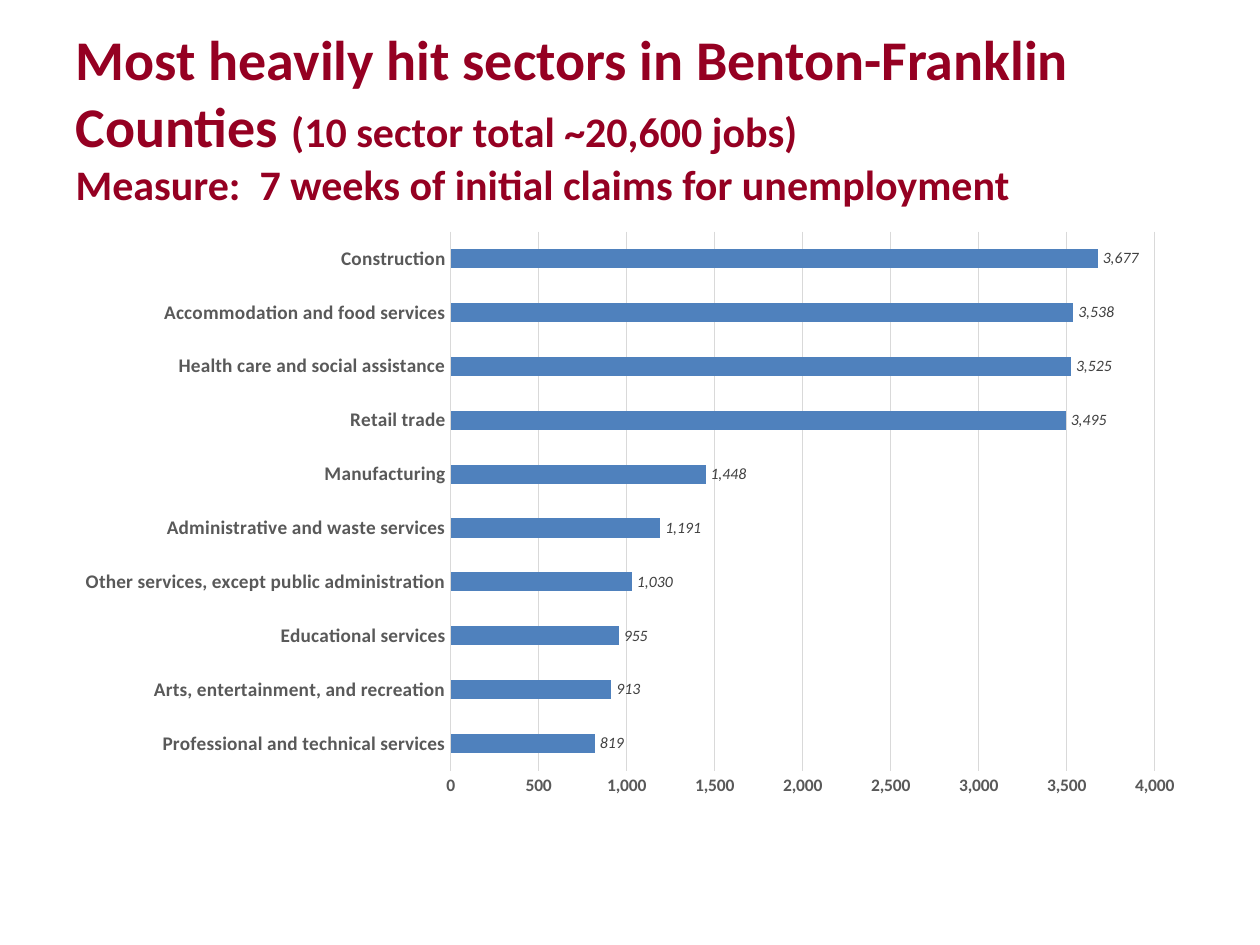
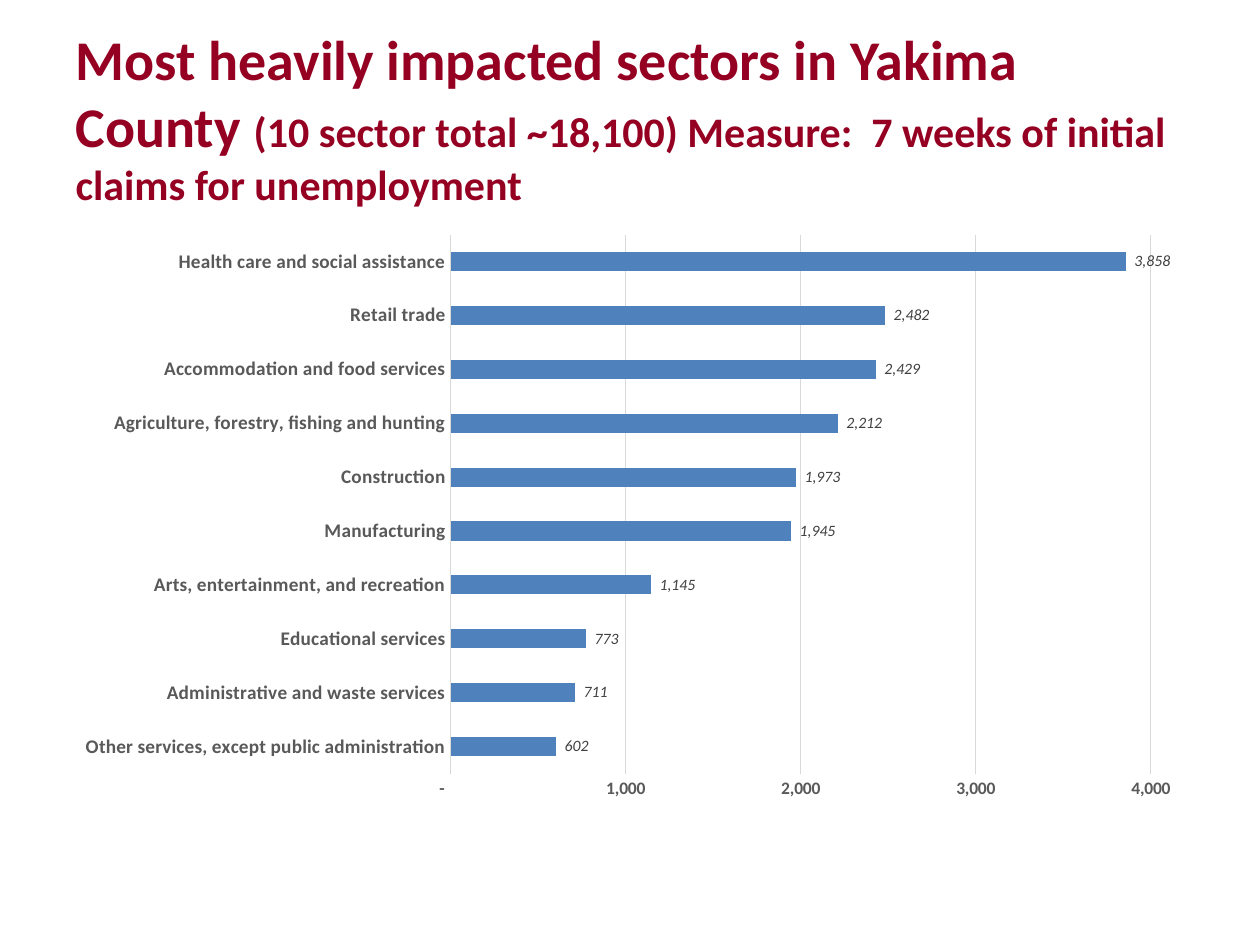
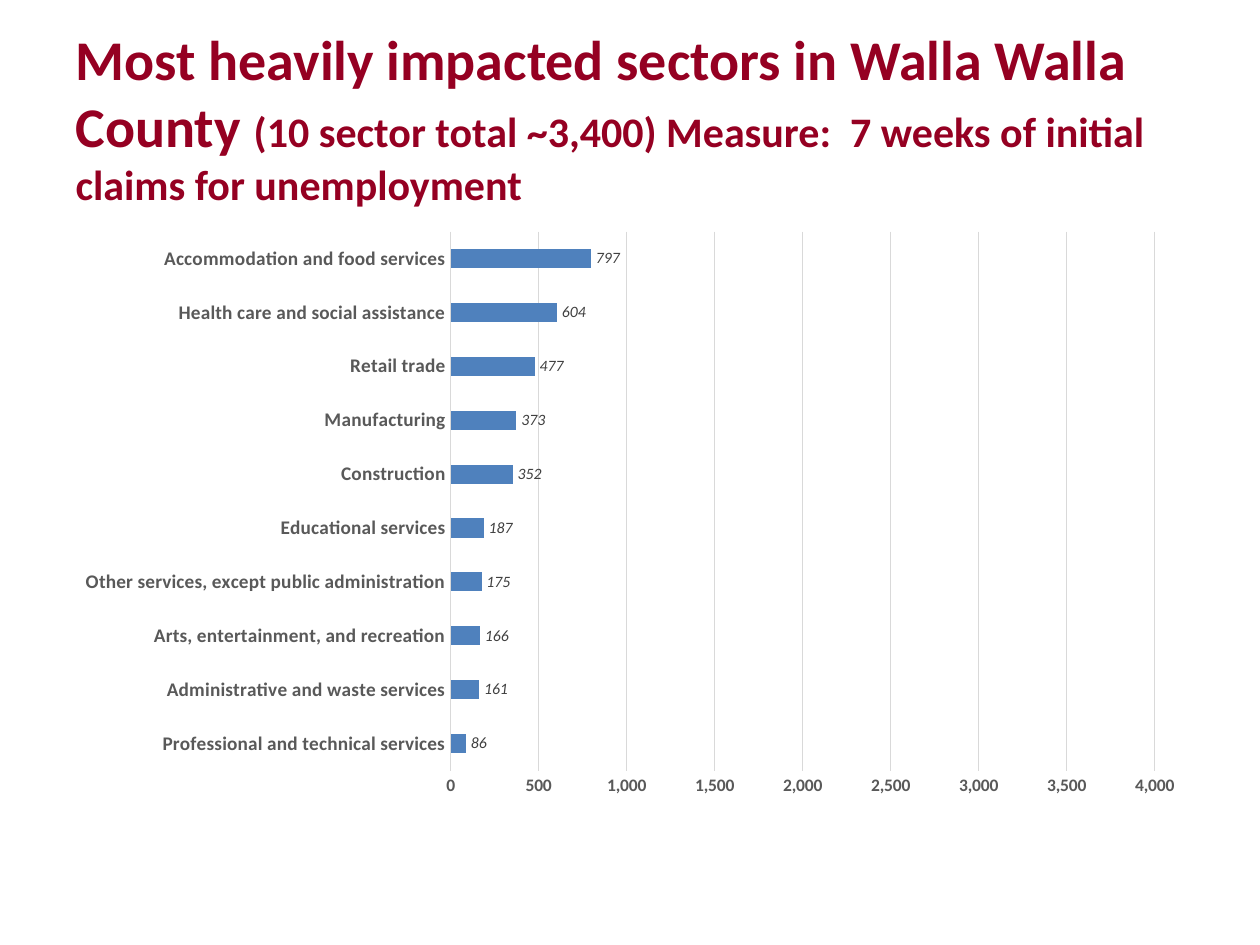
"""Build three slides charting initial unemployment claims by sector in three county areas."""
from pptx import Presentation, util as u
from pptx.chart.data import CategoryChartData
from pptx.dml.color import RGBColor
from pptx.enum import chart as ch, text

CRIMSON = RGBColor(0x95, 0x00, 0x22)
BAR_BLUE = RGBColor(0x4F, 0x81, 0xBD)
AXIS_GREY = RGBColor(0x59, 0x59, 0x59)
LABEL_GREY = RGBColor(0x40, 0x40, 0x40)
GRID_GREY = RGBColor(0xD9, 0xD9, 0xD9)
FONT = "Calibri"
PLAIN = "#,##0"
ACCOUNTING = '_(* #,##0_);_(* \\(#,##0\\);_(* "-"??_);_('

HEALTH = "Health care and social assistance"
RETAIL = "Retail trade"
FOOD = "Accommodation and food services"
BUILDING = "Construction"
MAKING = "Manufacturing"
ARTS = "Arts, entertainment, and recreation"
EDUCATION = "Educational services"
ADMIN = "Administrative and waste services"
OTHER = "Other services, except public administration"
PROFESSIONAL = "Professional and technical services"
FARMING = "Agriculture, forestry, fishing and hunting"

MEASURE = "Measure:  7 weeks of initial claims for unemployment"
COUNTIES = [
    ("Most heavily hit sectors in Benton-Franklin Counties ",
     "(10 sector total ~20,600 jobs) \v" + MEASURE, 220, 500, PLAIN,
     {PROFESSIONAL: 819, ARTS: 913, EDUCATION: 955, OTHER: 1030, ADMIN: 1191,
      MAKING: 1448, RETAIL: 3495, HEALTH: 3525, FOOD: 3538, BUILDING: 3677}),
    ("Most heavily impacted sectors in Yakima County ",
     "(10 sector total ~18,100) " + MEASURE, 223, 1000, ACCOUNTING,
     {OTHER: 602, ADMIN: 711, EDUCATION: 773, ARTS: 1145, MAKING: 1945,
      BUILDING: 1973, FARMING: 2212, FOOD: 2429, RETAIL: 2482, HEALTH: 3858}),
    ("Most heavily impacted sectors in Walla Walla County ",
     "(10 sector total ~3,400) " + MEASURE, 220, 500, PLAIN,
     {PROFESSIONAL: 86, ADMIN: 161, ARTS: 166, OTHER: 175, EDUCATION: 187,
      BUILDING: 352, MAKING: 373, RETAIL: 477, HEALTH: 604, FOOD: 797}),
]


def px(length):
    """Turn pixels at 126 to the inch into EMU."""
    return u.Emu(round(length * 914400 / 126))


def style(font, size, color, bold=False, italic=False):
    """Set every font property used on these slides."""
    font.name, font.size, font.bold, font.italic = FONT, u.Pt(size), bold, italic
    font.color.rgb = color


deck = Presentation()
deck.slide_width, deck.slide_height = px(1260), px(945)

for headline, detail, claims_top, step, number_format, claims in COUNTIES:
    slide = deck.slides.add_slide(deck.slide_layouts[5])
    title = slide.shapes.title
    title.left, title.top, title.width, title.height = px(63), px(38), px(1134), px(157)
    title.text_frame.word_wrap = True
    title.text_frame.auto_size = text.MSO_AUTO_SIZE.NONE
    title.text_frame.vertical_anchor = text.MSO_ANCHOR.MIDDLE
    heading = title.text_frame.paragraphs[0]
    heading.text = headline + detail
    heading.alignment = text.PP_ALIGN.LEFT
    style(heading.font, 24, CRIMSON, bold=True)
    heading.runs[0].text = headline
    heading.runs[0].font.size = u.Pt(32)
    for run in heading.runs[1:]:
        run.text = ""
    heading.clear()
    for wording, size in ((headline, 32), (detail, 24)):
        for index, line in enumerate(wording.split("\v")):
            if index:
                heading.add_line_break()
            run = heading.add_run()
            run.text = line
            style(run.font, size, CRIMSON, bold=True)

    sector_data = CategoryChartData(number_format=number_format)
    sector_data.categories = list(claims)
    sector_data.add_series("Series 1", list(claims.values()))
    claims_chart = slide.shapes.add_chart(
        ch.XL_CHART_TYPE.BAR_CLUSTERED, px(63), px(claims_top), px(1134), px(587),
        sector_data).chart
    claims_chart.has_legend = claims_chart.has_title = False
    claims_chart.font.name, claims_chart.font.size = FONT, u.Pt(10)

    sectors, scale = claims_chart.category_axis, claims_chart.value_axis
    for axis, size in ((sectors, 11), (scale, 10)):
        axis.major_tick_mark = axis.minor_tick_mark = ch.XL_TICK_MARK.NONE
        style(axis.tick_labels.font, size, AXIS_GREY, bold=True)
    scale.minimum_scale, scale.maximum_scale, scale.major_unit = 0, 4000, step
    scale.tick_labels.number_format = number_format
    scale.tick_labels.number_format_is_linked = False
    scale.format.line.fill.background()
    scale.has_major_gridlines = True
    for rule in (sectors.format.line, scale.major_gridlines.format.line):
        rule.color.rgb = GRID_GREY
        rule.width = u.Pt(0.75)

    bars = claims_chart.plots[0]
    bars.gap_width = 182
    bars.vary_by_categories = False
    bars.series[0].format.fill.solid()
    bars.series[0].format.fill.fore_color.rgb = BAR_BLUE
    counts = bars.series[0].data_labels
    counts.show_value = True
    counts.position = ch.XL_LABEL_POSITION.OUTSIDE_END
    counts.number_format = number_format
    counts.number_format_is_linked = False
    style(counts.font, 9, LABEL_GREY, italic=True)

deck.save("out.pptx")
